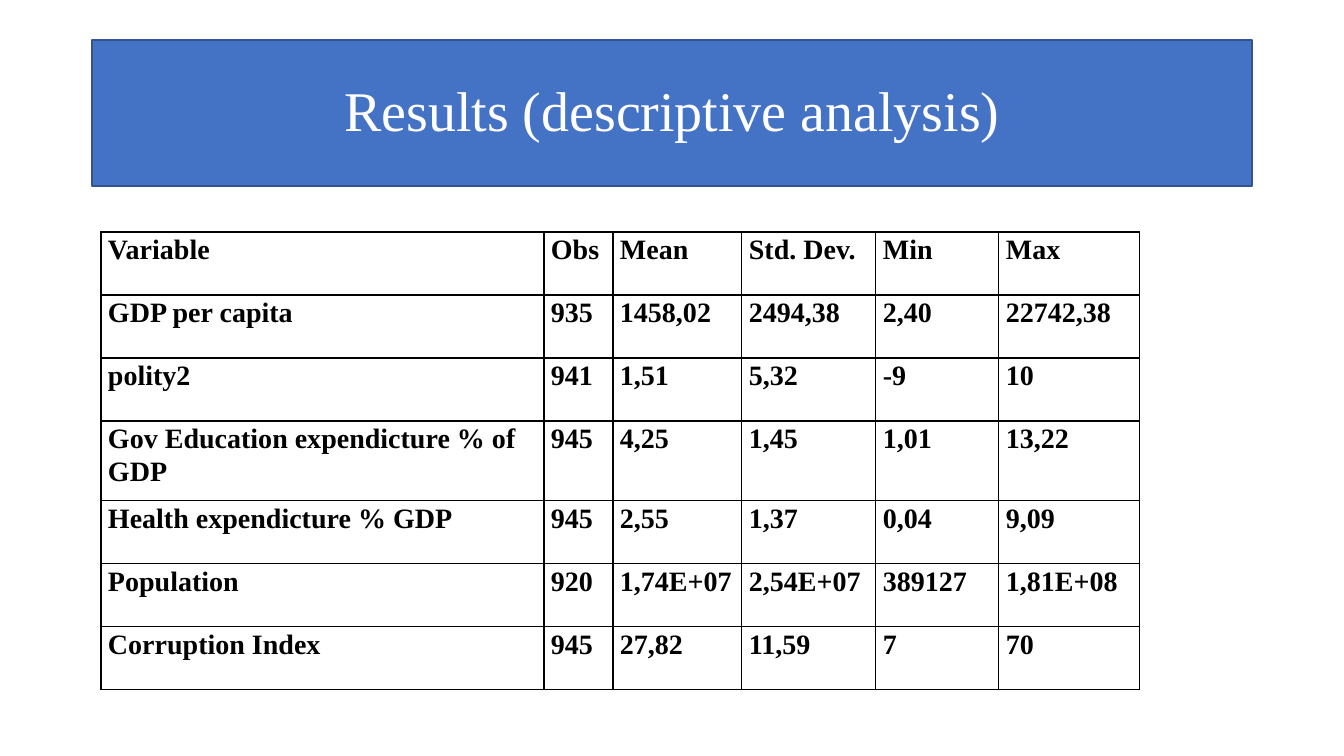
from lxml import etree
from pptx import Presentation
from pptx.dml.color import RGBColor
from pptx.enum.text import MSO_ANCHOR, PP_ALIGN
from pptx.oxml.ns import qn
from pptx.util import Pt

EMU_PER_PX = 12192000 / 1344
SLIDE_SIZE = (1344, 756)
TITLE_ONLY_LAYOUT = 5
CENTER = PP_ALIGN.CENTER
MIDDLE = MSO_ANCHOR.MIDDLE
TOP = MSO_ANCHOR.TOP
FONT = "Times New Roman"
COLORS = {
    "banner": "4472C4",
    "banner_line": "325491",
    "white": "FFFFFF",
    "black": "000000",
}

COLUMN_WIDTHS = [443, 69, 129, 134, 123, 141]
ROW_HEIGHTS = [63, 63, 63, 80, 63, 63, 63]
STATISTICS = [
    ["Variable", "Obs", "Mean", "Std. Dev.", "Min", "Max"],
    ["GDP per capita", "935", "1458,02", "2494,38", "2,40", "22742,38"],
    ["polity2", "941", "1,51", "5,32", "-9", "10"],
    ["Gov Education expendicture % of GDP", "945", "4,25", "1,45", "1,01", "13,22"],
    ["Health expendicture % GDP", "945", "2,55", "1,37", "0,04", "9,09"],
    ["Population", "920", "1,74E+07", "2,54E+07", "389127", "1,81E+08"],
    ["Corruption Index", "945", "27,82", "11,59", "7", "70"],
]


def px(length):
    return round(length * EMU_PER_PX)


def color(name):
    return RGBColor.from_string(COLORS[name])


def format_runs(paragraph, size, color_name, bold=False):
    for run in paragraph.runs:
        run.font.name = FONT
        run.font.size = Pt(size)
        run.font.bold = bold
        run.font.color.rgb = color(color_name)


def fill_title(slide, text, left, top, width, height):
    title = slide.shapes.title
    title.left, title.top = px(left), px(top)
    title.width, title.height = px(width), px(height)
    title.fill.solid()
    title.fill.fore_color.rgb = color("banner")
    title.line.color.rgb = color("banner_line")
    title.line.width = Pt(1)
    title.text_frame.text = text
    title.text_frame.vertical_anchor = MIDDLE
    paragraph = title.text_frame.paragraphs[0]
    paragraph.alignment = CENTER
    paragraph.line_spacing = 0.9
    format_runs(paragraph, 40, "white")


def add_borders(cell):
    """Draw the four sides; must run before the cell gets its fill."""
    properties = cell._tc.get_or_add_tcPr()
    for side in ("a:lnL", "a:lnR", "a:lnT", "a:lnB"):
        line = etree.SubElement(properties, qn(side), w=str(Pt(1)))
        fill = etree.SubElement(line, qn("a:solidFill"))
        etree.SubElement(fill, qn("a:srgbClr"), val=COLORS["black"])


def format_cell(cell, text):
    add_borders(cell)
    cell.fill.solid()
    cell.fill.fore_color.rgb = color("white")
    cell.margin_left = cell.margin_right = px(7)
    cell.margin_top = cell.margin_bottom = 0
    cell.vertical_anchor = TOP
    cell.text_frame.text = text
    paragraph = cell.text_frame.paragraphs[0]
    paragraph.line_spacing = 1.07
    paragraph.space_after = Pt(8)
    format_runs(paragraph, 20, "black", bold=True)


def add_statistics_table(slide, left, top):
    frame = slide.shapes.add_table(
        len(STATISTICS), len(COLUMN_WIDTHS), px(left), px(top),
        px(sum(COLUMN_WIDTHS)), px(sum(ROW_HEIGHTS)))
    table = frame.table
    table.first_row = False
    table.horz_banding = False
    for column, width in zip(table.columns, COLUMN_WIDTHS):
        column.width = px(width)
    for row, height, texts in zip(table.rows, ROW_HEIGHTS, STATISTICS):
        row.height = px(height)
        for cell, text in zip(row.cells, texts):
            format_cell(cell, text)


def main():
    presentation = Presentation()
    presentation.slide_width, presentation.slide_height = map(px, SLIDE_SIZE)
    layout = presentation.slide_layouts[TITLE_ONLY_LAYOUT]
    slide = presentation.slides.add_slide(layout)
    fill_title(slide, "Results (descriptive analysis)", 92, 40, 1160, 146)
    add_statistics_table(slide, 101, 232)
    presentation.save("out.pptx")


if __name__ == "__main__":
    main()
